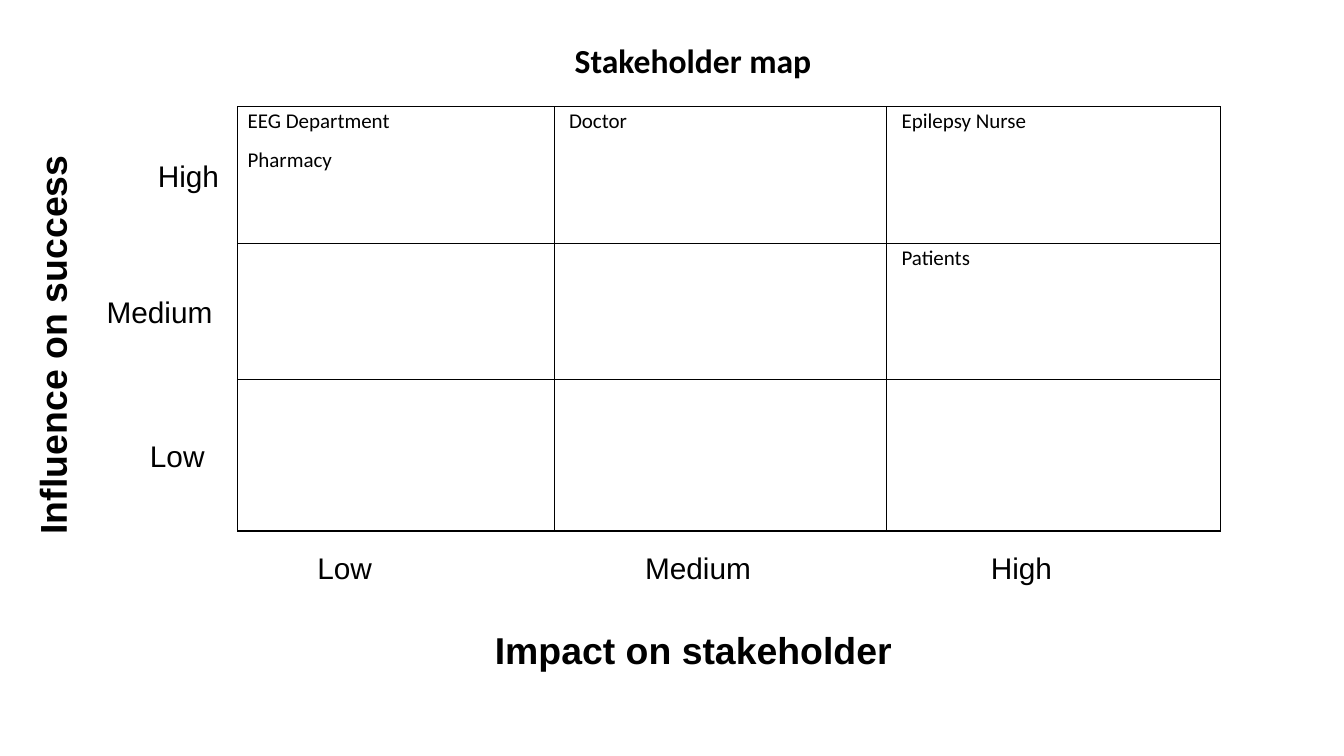
from dataclasses import dataclass

from lxml.etree import SubElement
from pptx import Presentation
from pptx.dml.color import RGBColor
from pptx.enum.shapes import MSO_SHAPE
from pptx.enum.text import MSO_ANCHOR, MSO_AUTO_SIZE, PP_ALIGN
from pptx.oxml.ns import qn
from pptx.util import Cm, Pt


@dataclass(frozen=True)
class Theme:
    ink: RGBColor = RGBColor(0x00, 0x00, 0x00)
    paper: RGBColor = RGBColor(0xFF, 0xFF, 0xFF)
    heading_font: str = "Calibri"
    axis_font: str = "Arial"
    title_size: float = 24
    axis_size: float = 26.7
    label_size: float = 21.3
    cell_size: float = 15
    border: float = 1


THEME = Theme()

GRID_LEFT, GRID_TOP = 5.99, 2.69
COL_WIDTHS = [7.98, 8.38, 8.41]
ROW_HEIGHTS = [3.45, 3.43, 3.81]
STAKEHOLDERS = [
    [["EEG Department", "Pharmacy"], ["Doctor"], ["Epilepsy Nurse"]],
    [[], [], ["Patients"]],
    [[], [], []],
]
INFLUENCE_LEVELS = [("High", 3.98), ("Medium", 2.69), ("Low", 3.78)]
IMPACT_LEVELS = [("Low", 8.0), ("Medium", 16.26), ("High", 24.97)]
IMPACT_LABEL_MIDDLE = 14.3
LABEL_WIDTH, LABEL_HEIGHT = 3.0, 1.0


def style_runs(tf, font, size, bold=False):
    for p in tf.paragraphs:
        for r in p.runs:
            r.font.name = font
            r.font.size = Pt(size)
            r.font.bold = bold
            r.font.color.rgb = THEME.ink


def set_margins(box, left, top, right, bottom):
    box.margin_left, box.margin_top = Cm(left), Cm(top)
    box.margin_right, box.margin_bottom = Cm(right), Cm(bottom)


def place_title(sp, text, left, top, width, height):
    sp.left, sp.top, sp.width, sp.height = Cm(left), Cm(top), Cm(width), Cm(height)
    tf = sp.text_frame
    tf.text = text
    tf.word_wrap = False
    tf.auto_size = MSO_AUTO_SIZE.NONE
    tf.vertical_anchor = MSO_ANCHOR.MIDDLE
    tf.paragraphs[0].alignment = PP_ALIGN.CENTER
    style_runs(tf, THEME.heading_font, THEME.title_size, bold=True)


def add_axis_title(slide, text, left, top, width, height, rotation=0):
    sp = slide.shapes.add_shape(
        MSO_SHAPE.RECTANGLE, Cm(left), Cm(top), Cm(width), Cm(height))
    sp.rotation = rotation
    sp.shadow.inherit = False
    sp.fill.solid()
    sp.fill.fore_color.rgb = THEME.paper
    sp.line.color.rgb = THEME.paper
    sp.line.width = Pt(0.75)
    tf = sp.text_frame
    tf.text = text
    tf.word_wrap = True
    tf.vertical_anchor = MSO_ANCHOR.TOP
    set_margins(tf, 0.33, 0.18, 0.33, 0.18)
    tf.paragraphs[0].alignment = PP_ALIGN.LEFT
    style_runs(tf, THEME.axis_font, THEME.axis_size, bold=True)


def add_level_label(slide, text, left, middle):
    """Add a one-line label centred vertically on middle."""
    sp = slide.shapes.add_textbox(
        Cm(left), Cm(middle - LABEL_HEIGHT / 2), Cm(LABEL_WIDTH), Cm(LABEL_HEIGHT))
    tf = sp.text_frame
    tf.text = text
    tf.word_wrap = True
    tf.vertical_anchor = MSO_ANCHOR.MIDDLE
    set_margins(tf, 0, 0, 0, 0)
    style_runs(tf, THEME.axis_font, THEME.label_size)


def add_borders(cell):
    tc_pr = cell._tc.get_or_add_tcPr()
    for i, side in enumerate(("lnL", "lnR", "lnT", "lnB")):
        ln = SubElement(tc_pr, qn(f"a:{side}"), w=str(Pt(THEME.border)))
        fill = SubElement(ln, qn("a:solidFill"))
        SubElement(fill, qn("a:srgbClr"), val=str(THEME.ink))
        tc_pr.insert(i, ln)


def fill_cell(cell, names, indent):
    cell.fill.solid()
    cell.fill.fore_color.rgb = THEME.paper
    add_borders(cell)
    set_margins(cell, indent, 0, 0.25, 0)
    tf = cell.text_frame
    tf.text = "\n".join(names)
    for p in tf.paragraphs:
        p.line_spacing = 1.07
        p.space_after = Pt(8)
    style_runs(tf, THEME.heading_font, THEME.cell_size)


def add_stakeholder_grid(slide):
    frame = slide.shapes.add_table(
        len(ROW_HEIGHTS), len(COL_WIDTHS), Cm(GRID_LEFT), Cm(GRID_TOP),
        Cm(sum(COL_WIDTHS)), Cm(sum(ROW_HEIGHTS)))
    table = frame.table
    table.first_row = table.horz_banding = False
    for col, width in zip(table.columns, COL_WIDTHS):
        col.width = Cm(width)
    for row, height, entries in zip(table.rows, ROW_HEIGHTS, STAKEHOLDERS):
        row.height = Cm(height)
        for i, (cell, names) in enumerate(zip(row.cells, entries)):
            fill_cell(cell, names, indent=0.37 if i else 0.25)


def main():
    prs = Presentation()
    prs.slide_width, prs.slide_height = Cm(33.87), Cm(19.05)
    slide = prs.slides.add_slide(prs.slide_layouts[5])

    place_title(slide.shapes.title, "Stakeholder map", 14.2, 0.88, 6.53, 1.27)
    add_stakeholder_grid(slide)
    add_axis_title(slide, "Impact on stakeholder", 12.14, 15.62, 11.56, 1.47)
    add_axis_title(slide, "Influence on success", -3.73, 7.42, 10.67, 2.08, rotation=270)

    row_top = GRID_TOP
    for (text, left), height in zip(INFLUENCE_LEVELS, ROW_HEIGHTS):
        add_level_label(slide, text, left, row_top + height / 2)
        row_top += height
    for text, left in IMPACT_LEVELS:
        add_level_label(slide, text, left, IMPACT_LABEL_MIDDLE)

    prs.save("out.pptx")


if __name__ == "__main__":
    main()
